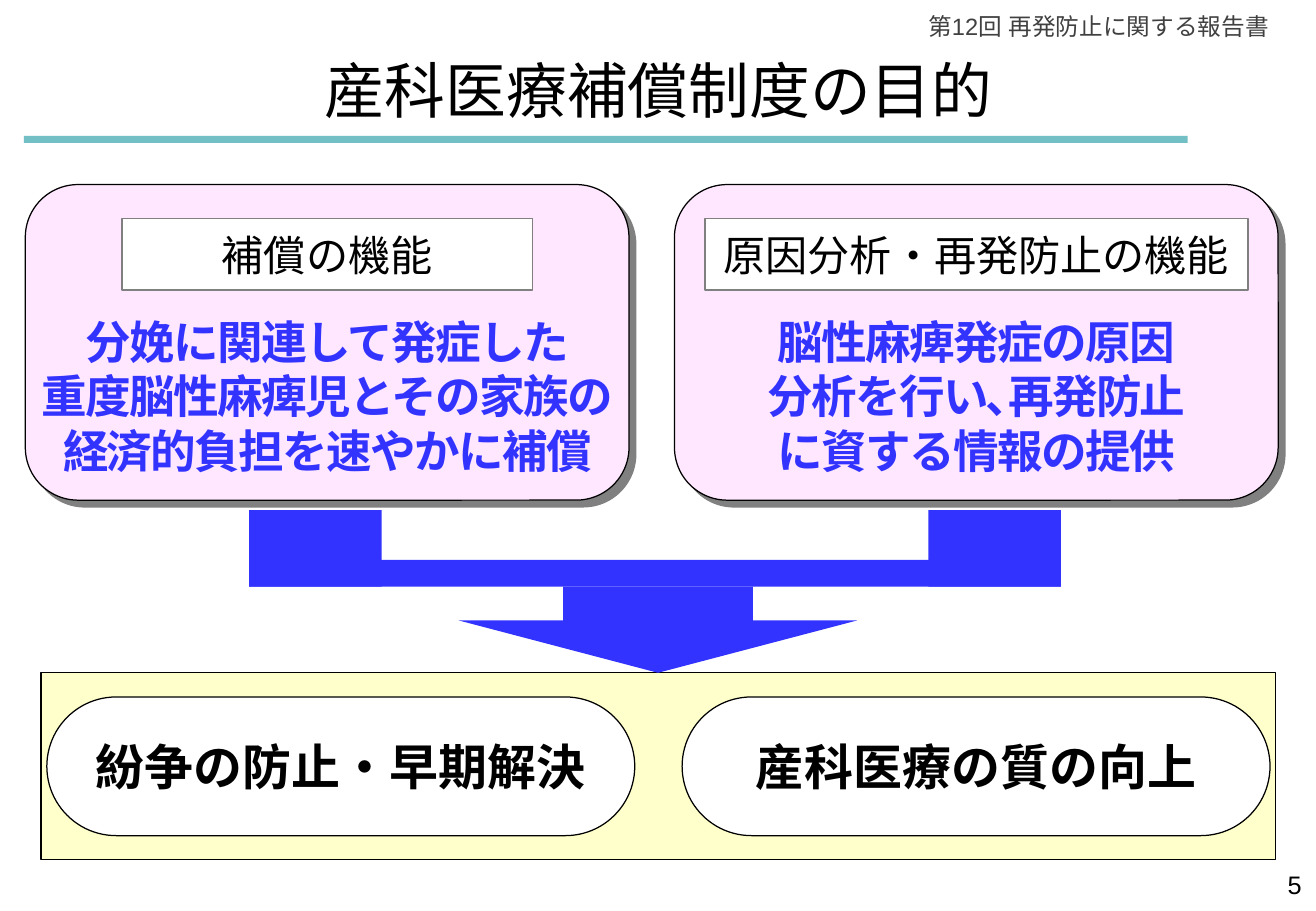
from dataclasses import dataclass

from lxml.etree import SubElement
from pptx import Presentation
from pptx.dml.color import RGBColor
from pptx.enum.shapes import MSO_SHAPE
from pptx.enum.text import MSO_ANCHOR, PP_ALIGN
from pptx.oxml.ns import qn
from pptx.util import Cm, Pt

HEADER = "第12回 再発防止に関する報告書"
TITLE = "産科医療補償制度の目的"
PAGE_NUMBER = "5"
FUNCTIONS = [
    {"left": 0.53, "label": "補償の機能", "label_width": 8.59,
     "statement": ["分娩に関連して発症した", "重度脳性麻痺児とその家族の", "経済的負担を速やかに補償"]},
    {"left": 14.1, "label": "原因分析・再発防止の機能", "label_width": 11.35,
     "statement": ["脳性麻痺発症の原因", "分析を行い､再発防止", "に資する情報の提供"]},
]
GOALS = ["紛争の防止・早期解決", "産科医療の質の向上"]


@dataclass(frozen=True)
class Theme:
    """Colours, fonts and type sizes of the slide."""
    black: str = "000000"
    white: str = "FFFFFF"
    grey: str = "808080"
    header: str = "404040"
    teal: str = "72BFC5"
    pink: str = "FFE7FF"
    yellow: str = "FFFFCC"
    blue: str = "3333FF"
    body_font: str = "Arial"
    title_font: str = "Noto Sans CJK JP"
    header_size: int = 14
    page_size: int = 15
    label_size: int = 25
    statement_size: int = 27
    statement_pitch: float = 32.5
    goal_size: int = 29
    title_size: int = 36


THEME = Theme()
SLIDE_WIDTH, SLIDE_HEIGHT = 27.51, 19.05
CARD_TOP, CARD_WIDTH, CARD_HEIGHT = 3.86, 12.62, 6.6
BASE_LEFT, BASE_TOP, BASE_WIDTH, BASE_HEIGHT = 0.86, 14.07, 25.81, 3.91
GOAL_WIDTH, GOAL_HEIGHT, GOAL_INSET = 12.29, 2.9, 0.12
POST_LEFTS, POST_TOP, POST_WIDTH, POST_HEIGHT = (5.21, 19.41), 10.67, 2.77, 1.6
BAR_HEIGHT = 0.56
ARROW_WIDTH, ARROW_HEIGHT = 8.33, 1.8


def add_box(slide, kind, place, fill, line=None, weight=0.75, adjust=()):
    """Add a filled preset shape at a place given in centimetres."""
    box = slide.shapes.add_shape(kind, *map(Cm, place))
    box.shadow.inherit = False
    box.fill.solid()
    box.fill.fore_color.rgb = RGBColor.from_string(fill)
    if line:
        box.line.color.rgb = RGBColor.from_string(line)
        box.line.width = Pt(weight)
    else:
        box.line.fill.background()
    for index, value in enumerate(adjust):
        box.adjustments[index] = value
    return box


def add_shadow(box):
    """Give a shape a hard grey shadow towards the lower right."""
    effects = box.element.spPr.find(qn("a:effectLst"))
    shadow = SubElement(effects, qn("a:outerShdw"), dist="72390", dir="2700000",
                        algn="ctr", rotWithShape="0")
    SubElement(shadow, qn("a:srgbClr"), val=THEME.grey)


def write(box, lines, size, color=THEME.black, font=THEME.body_font, bold=False,
          align=PP_ALIGN.CENTER, anchor=MSO_ANCHOR.MIDDLE, wrap=False, pitch=None, spacing=None):
    """Write lines into one paragraph of a shape."""
    frame = box.text_frame
    frame.word_wrap = wrap
    frame.vertical_anchor = anchor
    paragraph = frame.paragraphs[0]
    paragraph.alignment = align
    if pitch:
        paragraph.line_spacing = Pt(pitch)
    for index, line in enumerate(lines):
        if index:
            paragraph.add_line_break()
        run = paragraph.add_run()
        run.text = line
        run.font.size = Pt(size)
        run.font.bold = bold
        run.font.name = font
        run.font.color.rgb = RGBColor.from_string(color)
        properties = run.font._element
        SubElement(properties, qn("a:ea"), typeface=font)
        if spacing:
            properties.set("spc", str(spacing * 100))


def add_text(slide, place, lines, size, **style):
    """Add a text box at a place given in centimetres."""
    write(slide.shapes.add_textbox(*map(Cm, place)), lines, size, **style)


def add_function(slide, function):
    """Add one card with its label and statement."""
    left = function["left"]
    card = add_box(slide, MSO_SHAPE.ROUNDED_RECTANGLE, (left, CARD_TOP, CARD_WIDTH, CARD_HEIGHT),
                   THEME.pink, THEME.black, adjust=(0.167,))
    add_shadow(card)
    label_width = function["label_width"]
    label_left = left + (CARD_WIDTH - label_width) / 2
    label = add_box(slide, MSO_SHAPE.RECTANGLE, (label_left, 4.57, label_width, 1.5),
                    THEME.white, THEME.grey, weight=1)
    write(label, [function["label"]], THEME.label_size)
    add_text(slide, (left, 6.43, CARD_WIDTH, 3.73), function["statement"], THEME.statement_size,
             color=THEME.blue, bold=True, anchor=MSO_ANCHOR.TOP,
             pitch=THEME.statement_pitch, spacing=-1)


def add_goals(slide):
    """Add the yellow base with its two goals."""
    add_box(slide, MSO_SHAPE.RECTANGLE, (BASE_LEFT, BASE_TOP, BASE_WIDTH, BASE_HEIGHT),
            THEME.yellow, THEME.black)
    step = BASE_WIDTH - 2 * GOAL_INSET - GOAL_WIDTH
    top = BASE_TOP + (BASE_HEIGHT - GOAL_HEIGHT) / 2
    for index, goal in enumerate(GOALS):
        left = BASE_LEFT + GOAL_INSET + index * step
        pill = add_box(slide, MSO_SHAPE.ROUNDED_RECTANGLE, (left, top, GOAL_WIDTH, GOAL_HEIGHT),
                       THEME.white, THEME.black, adjust=(0.5,))
        write(pill, [goal], THEME.goal_size, bold=True, wrap=True)


def add_merging_arrow(slide):
    """Join both cards into one arrow down to the goals."""
    bottom = POST_TOP + POST_HEIGHT
    for left in POST_LEFTS:
        add_box(slide, MSO_SHAPE.RECTANGLE, (left, POST_TOP, POST_WIDTH, POST_HEIGHT), THEME.blue)
    bar_width = POST_LEFTS[1] + POST_WIDTH - POST_LEFTS[0]
    add_box(slide, MSO_SHAPE.RECTANGLE,
            (POST_LEFTS[0], bottom - BAR_HEIGHT, bar_width, BAR_HEIGHT), THEME.blue)
    add_box(slide, MSO_SHAPE.DOWN_ARROW,
            ((SLIDE_WIDTH - ARROW_WIDTH) / 2, bottom, ARROW_WIDTH, ARROW_HEIGHT),
            THEME.blue, adjust=(0.476, 0.608))


def main():
    """Build the slide and save it."""
    deck = Presentation()
    deck.slide_width, deck.slide_height = Cm(SLIDE_WIDTH), Cm(SLIDE_HEIGHT)
    slide = deck.slides.add_slide(deck.slide_layouts[6])
    add_box(slide, MSO_SHAPE.RECTANGLE, (0.5, 2.84, 24.33, 0.15), THEME.teal)
    add_text(slide, (18.75, 0.13, 8.03, 0.86), [HEADER], THEME.header_size, color=THEME.header,
             align=PP_ALIGN.RIGHT, anchor=MSO_ANCHOR.TOP, wrap=True)
    add_text(slide, (6.43, 0.97, 14.66, 1.8), [TITLE], THEME.title_size, font=THEME.title_font)
    for function in FUNCTIONS:
        add_function(slide, function)
    add_goals(slide)
    add_merging_arrow(slide)
    add_text(slide, (21.03, 18.06, 6.43, 0.95), [PAGE_NUMBER], THEME.page_size,
             align=PP_ALIGN.RIGHT, anchor=MSO_ANCHOR.TOP, wrap=True)
    deck.save("out.pptx")


if __name__ == "__main__":
    main()
